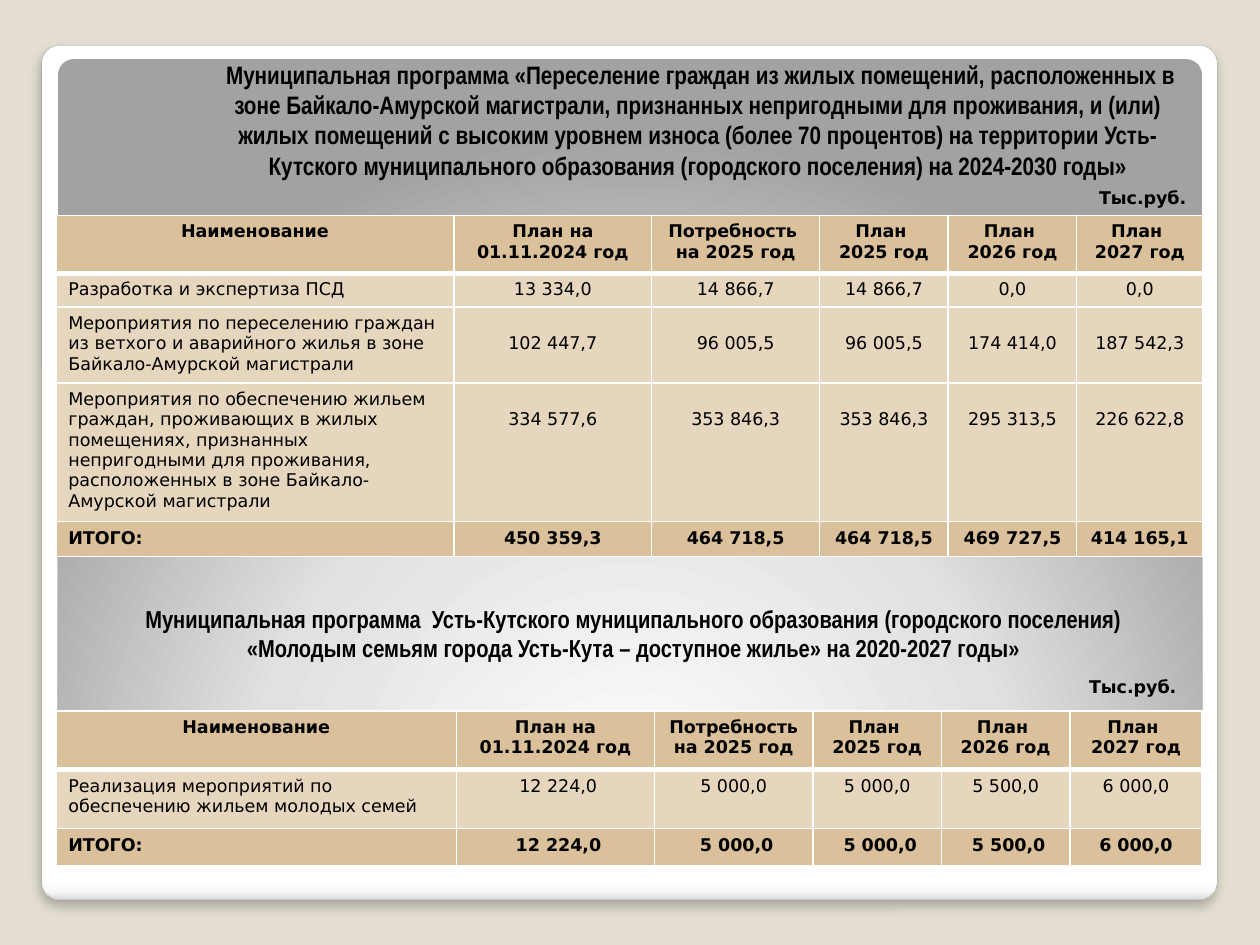
from lxml.etree import SubElement
from pptx import Presentation
from pptx.dml.color import RGBColor
from pptx.enum.shapes import MSO_SHAPE as Shape
from pptx.enum.text import MSO_ANCHOR as Anchor, PP_ALIGN as Align
from pptx.oxml import parse_xml
from pptx.oxml.ns import nsdecls, qn
from pptx.util import Pt

THEME = {
    "backdrop": "E3DED1", "frame_line": "A4A4A4", "text": "000000",
    "strong_row": "DAC19B", "plain_row": "E6D6BD", "rule": "FFFFFF",
    "frame_stops": [(0, "FFFFFF"), (98, "FFFFFF"), (99, "F7F7F7"), (100, "DADADA")],
    "panel_stops": [(0, "FFFFFF"), (55, "E1E1E1"), (100, "A2A2A2")],
    "heading_font": "Arial Narrow", "body_font": "DejaVu Sans",
    "heading_size": 14.4, "subheading_size": 14, "body_size": 10,
}
LINE_HEIGHT = 11.64
CELL_INSET = 3.6
UNIT = "Тыс.руб."
HEADER = ["Наименование", "План на 01.11.2024 год", "Потребность \nна 2025 год",
          "План \n2025 год", "План \n2026 год", "План \n2027 год"]

PROGRAMMES = [
    {
        "title": " Муниципальная программа «Переселение граждан из жилых помещений, "
                 "расположенных в зоне Байкало-Амурской магистрали, признанных "
                 "непригодными для проживания, и (или) жилых помещений с высоким "
                 "уровнем износа (более 70 процентов) на территории Усть-Кутского "
                 "муниципального образования (городского поселения) на 2024-2030 годы»",
        "title_box": (109.4, 31.7, 578.9, 74.9),
        "title_size": THEME["heading_size"],
        "unit_box": (617, 103.7, 72, 18),
        "table_at": (31.9, 123.1),
        "columns": [227.5, 113, 96, 73.5, 73.5, 72],
        "heights": [33.1, 19.1, 42.5, 77.1, 19.9],
        "lowered_rows": (2, 3),
        "rows": [
            HEADER,
            ["Разработка и экспертиза ПСД",
             "13 334,0", "14 866,7", "14 866,7", "0,0", "0,0"],
            ["Мероприятия по переселению граждан из ветхого и аварийного жилья "
             "в зоне Байкало-Амурской магистрали",
             "102 447,7", "96 005,5", "96 005,5", "174 414,0", "187 542,3"],
            ["Мероприятия по обеспечению жильем граждан, проживающих в жилых "
             "помещениях, признанных непригодными для проживания, расположенных "
             "в зоне Байкало-Амурской магистрали",
             "334 577,6", "353 846,3", "353 846,3", "295 313,5", " 226 622,8 "],
            ["ИТОГО:", "450 359,3", "464 718,5", "464 718,5", "469 727,5", "414 165,1"],
        ],
    },
    {
        "title": "Муниципальная программа  Усть-Кутского муниципального образования "
                 "(городского поселения) «Молодым семьям города Усть-Кута – доступное "
                 "жилье» на 2020-2027 годы»",
        "title_box": (72.7, 342.7, 578.9, 39.6),
        "title_size": THEME["subheading_size"],
        "unit_box": (611.3, 383, 72, 18),
        "table_at": (31.9, 406.2),
        "columns": [229, 113, 90.7, 73.4, 73.4, 75.6],
        "heights": [33.7, 33.7, 21.3],
        "lowered_rows": (),
        "rows": [
            HEADER,
            ["Реализация мероприятий по обеспечению жильем молодых семей",
             " 12 224,0", "5 000,0", "5 000,0", "5 500,0", "6 000,0"],
            ["ИТОГО:", " 12 224,0", " 5 000,0", " 5 000,0", " 5 500,0", "6 000,0"],
        ],
    },
]


def color(name):
    return RGBColor.from_string(THEME[name])


def write(frame, text, font, size, bold, align):
    frame.word_wrap = True
    for index, line in enumerate(text.split("\n")):
        paragraph = frame.paragraphs[0] if index == 0 else frame.add_paragraph()
        paragraph.alignment = align
        run = paragraph.add_run()
        run.text = line
        run.font.name = THEME[font]
        run.font.size = Pt(size)
        run.font.bold = bold
        run.font.color.rgb = color("text")


def add_label(slide, box, text, font, size, anchor):
    label = slide.shapes.add_textbox(*map(Pt, box))
    label.text_frame.vertical_anchor = anchor
    write(label.text_frame, text, font, size, True, Align.CENTER)


def add_card(slide, box, stops, direction):
    card = slide.shapes.add_shape(Shape.ROUNDED_RECTANGLE, *map(Pt, box))
    card.adjustments[0] = 0.021
    card.shadow.inherit = False
    card.line.fill.background()
    stop_xml = "".join(f'<a:gs pos="{at * 1000}"><a:srgbClr val="{tone}"/></a:gs>'
                       for at, tone in stops)
    gradient = parse_xml(f'<a:gradFill {nsdecls("a")} rotWithShape="1">'
                         f'<a:gsLst>{stop_xml}</a:gsLst>{direction}</a:gradFill>')
    card._element.spPr.find(qn("a:prstGeom")).addnext(gradient)
    return card


def add_frame(slide):
    frame = add_card(slide, (23.8, 25.9, 671.8, 488.2), THEME["frame_stops"],
                     '<a:lin ang="5400000" scaled="0"/>')
    frame.line.color.rgb = color("frame_line")
    frame.line.width = Pt(0.16)
    shadow = SubElement(frame._element.spPr.find(qn("a:effectLst")), qn("a:outerShdw"),
                        blurRad=str(Pt(6)), dist=str(Pt(4)), dir="5400000",
                        algn="t", rotWithShape="0")
    tone = SubElement(shadow, qn("a:srgbClr"), val="000000")
    SubElement(tone, qn("a:alpha"), val="25000")


def add_borders(cell, bottom):
    properties = cell._tc.get_or_add_tcPr()
    for index, (side, width) in enumerate([("L", 1), ("R", 1), ("T", 1), ("B", bottom)]):
        properties.insert(index, parse_xml(
            f'<a:ln{side} {nsdecls("a")} w="{Pt(width)}"><a:solidFill>'
            f'<a:srgbClr val="{THEME["rule"]}"/></a:solidFill></a:ln{side}>'))


def add_budget(slide, programme):
    rows, columns, heights = (programme[key] for key in ("rows", "columns", "heights"))
    size = (sum(columns), sum(heights))
    budget = slide.shapes.add_table(len(rows), len(columns),
                                    *map(Pt, programme["table_at"] + size)).table
    budget.first_row = budget.horz_banding = False
    for column, width in zip(budget.columns, columns):
        column.width = Pt(width)
    for r, values in enumerate(rows):
        budget.rows[r].height = Pt(heights[r])
        strong = r in (0, len(rows) - 1)
        for c, value in enumerate(values):
            cell = budget.cell(r, c)
            lowered = c > 0 and r in programme["lowered_rows"]
            cell.margin_top = Pt(CELL_INSET + LINE_HEIGHT * lowered)
            cell.fill.solid()
            cell.fill.fore_color.rgb = color("strong_row" if strong else "plain_row")
            add_borders(cell, 1 if r else 3)
            write(cell.text_frame, value, "body_font", THEME["body_size"], strong,
                  Align.LEFT if r and c == 0 else Align.CENTER)


def main():
    deck = Presentation()
    deck.slide_width, deck.slide_height = Pt(720), Pt(540)
    slide = deck.slides.add_slide(deck.slide_layouts[6])
    slide.background.fill.solid()
    slide.background.fill.fore_color.rgb = color("backdrop")
    add_frame(slide)
    add_card(slide, (33.1, 33.8, 653.8, 432), THEME["panel_stops"],
             '<a:path path="circle"><a:fillToRect l="50000" t="175000" '
             'r="50000" b="-75000"/></a:path>')
    for programme in PROGRAMMES:
        add_label(slide, programme["title_box"], programme["title"], "heading_font",
                  programme["title_size"], Anchor.BOTTOM)
        add_budget(slide, programme)
        add_label(slide, programme["unit_box"], UNIT, "body_font",
                  THEME["body_size"], Anchor.MIDDLE)
    deck.save("out.pptx")


if __name__ == "__main__":
    main()
